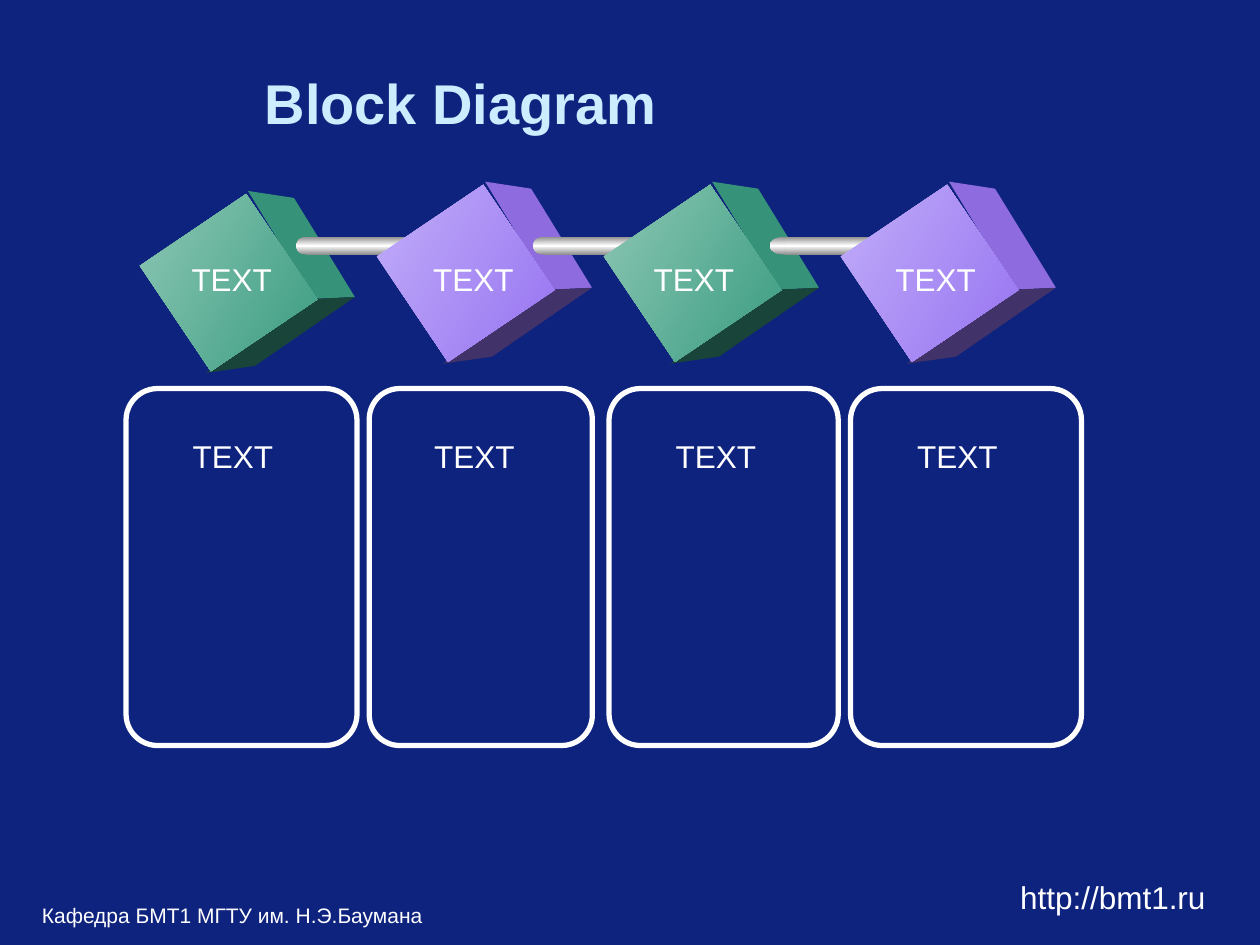
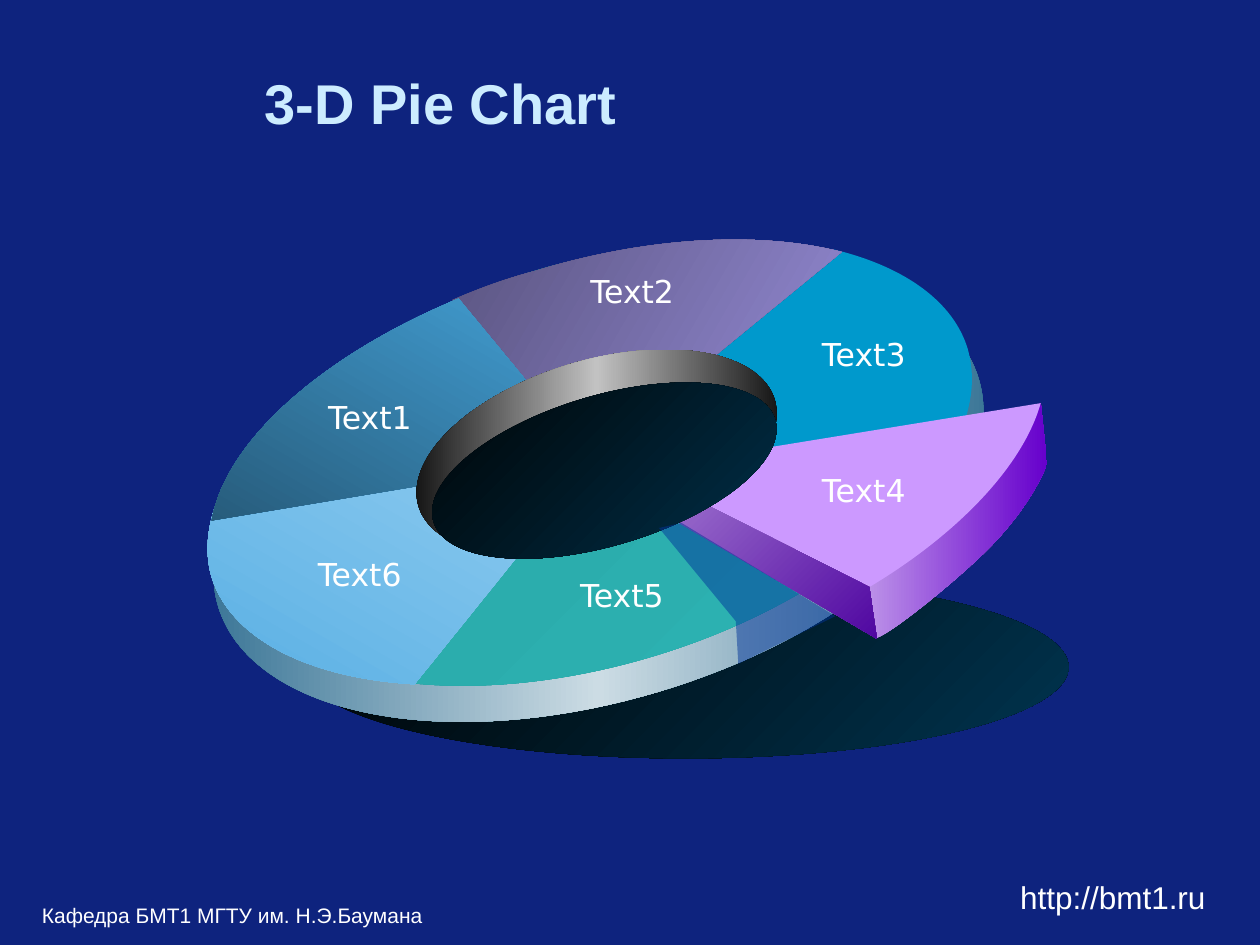
import pptx
import pptx.dml.color
import pptx.enum.shapes
import pptx.enum.text
import pptx.oxml
import pptx.oxml.ns
import pptx.util

Pt = pptx.util.Pt
RGBColor = pptx.dml.color.RGBColor
SHAPE = pptx.enum.shapes.MSO_SHAPE
ALIGN = pptx.enum.text.PP_ALIGN
qn = pptx.oxml.ns.qn
NAMESPACE = pptx.oxml.ns.nsdecls("a")

NAVY = RGBColor(0x0E, 0x23, 0x7E)
NAVY_DARK = RGBColor(0x0A, 0x19, 0x5A)
ICE = RGBColor(0xCC, 0xEC, 0xFF)
WHITE = RGBColor(0xFF, 0xFF, 0xFF)
BLACK = RGBColor(0x00, 0x00, 0x00)
SHADOW_BLUE = RGBColor(0x00, 0x34, 0x4F)
STEEL = RGBColor(0x90, 0x90, 0x90)
SILVER = RGBColor(0xC2, 0xC2, 0xC2)
RIM_BLUE = RGBColor(0x29, 0x69, 0x8D)
RIM_LIGHT = RGBColor(0xCC, 0xDC, 0xE4)
TEAL_DARK = RGBColor(0x28, 0xA0, 0xA0)
TEAL = RGBColor(0x2E, 0xB8, 0xB8)
CYAN = RGBColor(0x00, 0x99, 0xCC)
SKY_LIGHT = RGBColor(0x90, 0xCC, 0xF0)
SKY = RGBColor(0x5A, 0xB0, 0xE4)
PLUM = RGBColor(0x5A, 0x54, 0x80)
LAVENDER = RGBColor(0x96, 0x8C, 0xD8)
OCEAN = RGBColor(0x43, 0xA0, 0xD5)
OCEAN_DARK = RGBColor(0x27, 0x5C, 0x7C)
ORCHID = RGBColor(0xCC, 0x99, 0xFF)
ORCHID_WALL = RGBColor(0xBB, 0x90, 0xE8)
VIOLET = RGBColor(0x66, 0x00, 0xCC)
VIOLET_PALE = RGBColor(0xA8, 0x80, 0xD4)
VIOLET_DARK = RGBColor(0x50, 0x07, 0xA1)
GLASS_BLUE = RGBColor(0x00, 0x33, 0x99)

# Each cube has front light, front dark, right side and underside.
GREEN_CUBE = (RGBColor(0x8C, 0xC6, 0xB4), RGBColor(0x3B, 0x9D, 0x81),
              RGBColor(0x36, 0x92, 0x78), RGBColor(0x19, 0x44, 0x39))
PURPLE_CUBE = (RGBColor(0xC0, 0xAC, 0xF8), RGBColor(0x98, 0x74, 0xF2),
               RGBColor(0x8E, 0x6C, 0xE0), RGBColor(0x42, 0x32, 0x6A))


def paint(shape, colours, angle=0):
    """Fill a shape with one colour or an evenly spaced gradient, without line or shadow."""
    shape.shadow.inherit = False
    shape.line.fill.background()
    shape.fill.solid()
    shape.fill.fore_color.rgb = colours[0]
    if len(colours) > 1:
        stops = "".join(
            f'<a:gs pos="{100000 * index // (len(colours) - 1)}"><a:srgbClr val="{colour}"/></a:gs>'
            for index, colour in enumerate(colours))
        gradient = pptx.oxml.parse_xml(
            f'<a:gradFill {NAMESPACE} rotWithShape="0"><a:gsLst>{stops}</a:gsLst>'
            f'<a:lin ang="{angle * 60000}" scaled="0"/></a:gradFill>')
        solid = shape.fill._xPr.find(qn("a:solidFill"))
        solid.getparent().replace(solid, gradient)


def add_outline(page, points, colours, angle=0, curves=0):
    """Add a closed freeform; its first segments, as many as curves, are cubic."""
    corners = [(Pt(x), Pt(y)) for x, y in points]
    builder = page.shapes.build_freeform(*corners[0])
    builder.add_line_segments(corners[1:], close=True)
    shape = builder.convert_to_shape()
    segments = list(shape._element.iter(qn("a:lnTo")))
    for first in range(0, 3 * curves, 3):
        curve = pptx.oxml.parse_xml(f"<a:cubicBezTo {NAMESPACE}/>")
        segments[first].addprevious(curve)
        for segment in segments[first:first + 3]:
            curve.append(segment[0])
            segment.getparent().remove(segment)
    paint(shape, colours, angle)
    return shape


deck = pptx.Presentation()
deck.slide_width, deck.slide_height = Pt(720), Pt(540)
background = deck.slide_master.background.fill
background.solid()
background.fore_color.rgb = NAVY

pages = []
for heading in ("Block Diagram", "3-D Pie Chart"):
    page = deck.slides.add_slide(deck.slide_layouts[5])
    title = page.shapes.title
    title.left, title.top, title.width, title.height = Pt(144), Pt(36), Pt(545.76), Pt(44.64)
    title.text_frame.text = heading
    title.text_frame.vertical_anchor = pptx.enum.text.MSO_ANCHOR.MIDDLE
    para = title.text_frame.paragraphs[0]
    para.alignment = ALIGN.LEFT
    font = para.runs[0].font
    font.name, font.size, font.bold = "Arial", Pt(32), True
    font.color.rgb = ICE
    pages.append(page)
block_page, pie_page = pages

# Block diagram: cards
for left, width in ((486, 132), (348, 131), (211, 127.5), (72, 132)):
    card = block_page.shapes.add_shape(SHAPE.ROUNDED_RECTANGLE, Pt(left), Pt(222), Pt(width), Pt(204))
    card.adjustments[0] = 0.137
    card.shadow.inherit = False
    card.fill.background()
    card.line.color.rgb = WHITE
    card.line.width = Pt(3)

# Block diagram: each cube covers the end of the rod that comes from the previous one
CUBE_RIGHT = ((58.3, 0), (84.6, 4), (119.4, 60.6), (96, 61.7))
CUBE_UNDER = ((96, 61.7), (119.4, 60.6), (62.3, 100), (34.3, 104))
cubes = ((83.4, 109.1, GREEN_CUBE, (169.2, 12.2, 61.2)),
         (218.9, 103.8, PURPLE_CUBE, (304.6, 12.2, 61.2)),
         (348.6, 103.8, GREEN_CUBE, (439.9, 16.6, 79.9)),
         (484, 103.8, PURPLE_CUBE, None))
for left, top, (light, dark, side, under), rod in cubes:
    for face, colour in ((CUBE_RIGHT, side), (CUBE_UNDER, under)):
        add_outline(block_page, [(left + x, top + y) for x, y in face], [colour])
    front = block_page.shapes.add_shape(SHAPE.RECTANGLE, Pt(left + 10.8), Pt(top + 15.7), Pt(72.7), Pt(73.4))
    front.rotation = 56
    paint(front, [light, dark], 30)
    if rod:
        rod_left, cap_width, length = rod
        bar_left = rod_left + cap_width / 2
        bar_end = bar_left + length
        metal, socket = [STEEL, WHITE, STEEL], [NAVY_DARK, NAVY, NAVY_DARK]
        for kind, x, y, width, height, colours in (
                (SHAPE.OVAL, rod_left, 135.4, cap_width, 10.1, metal),
                (SHAPE.RECTANGLE, bar_left, 135.4, length, 10.1, metal),
                (SHAPE.OVAL, bar_end - cap_width / 2, 136.1, cap_width * 0.88, 10.1, socket),
                (SHAPE.OVAL, bar_end, 139, cap_width / 4, 2.9, socket)):
            part = block_page.shapes.add_shape(kind, Pt(x), Pt(y), Pt(width), Pt(height))
            paint(part, colours, 90)

# Pie: shadow, outer wall and top of the ring
TILT = -16.6
for left, top, width, height, tilt, colours, angle in (
        (172.8, 329, 437.8, 104.4, 0, [BLACK, SHADOW_BLUE], 45),
        (115.2, 162.7, 453.6, 237.6, TILT, [RIM_BLUE, RIM_LIGHT, RIM_BLUE], 0),
        (120.2, 149.8, 437.8, 230.4, TILT, [TEAL_DARK, TEAL], 45)):
    disc = pie_page.shapes.add_shape(SHAPE.OVAL, Pt(left), Pt(top), Pt(width), Pt(height))
    disc.rotation = tilt
    paint(disc, colours, angle)

# Pie: sectors on the top, a curved rim followed by the tip
sectors = (
    ([(476.6, 142.6), (517.7, 152.6), (545, 172.8), (553, 199.4),
      (557.3, 214.6), (555.8, 230.4), (548.6, 247.7), (337.7, 264.2)], [CYAN], 0),
    ([(122.4, 290.9), (118.1, 304.6), (117.4, 317.5), (121, 329.8),
      (131.8, 364.3), (175, 387.4), (236.9, 391), (338.4, 265)], [SKY_LIGHT, SKY], 120),
    ([(258.5, 171.4), (273.6, 164.9), (289.4, 159.1), (306, 154.8),
      (369.4, 135.4), (433.4, 131.8), (481, 144), (337.7, 261.4)], [PLUM, LAVENDER], 30),
    ([(262.1, 170.6), (184.3, 203), (128.9, 252), (121, 297.4), (337, 261.4)], [OCEAN, OCEAN_DARK], 120))
for points, colours, angle in sectors:
    add_outline(pie_page, points, colours, angle, curves=len(points) // 3 - (len(points) == 3))

hole_wall = pie_page.shapes.add_shape(SHAPE.OVAL, Pt(234.7), Pt(205.9), Pt(212.4), Pt(105.8))
hole_wall.rotation = TILT
paint(hole_wall, [BLACK, SILVER, BLACK])

# Pie: the slice pulled out, as outer wall, top and cut side
add_outline(pie_page, [(598.3, 265), (593.3, 278.6), (581, 297.4), (564.5, 313.9),
                       (547.9, 330.5), (511.2, 360.7), (501.1, 364.5),
                       (496.8, 334.8), (594.7, 230.2)], [ORCHID_WALL, VIOLET], curves=2)
add_outline(pie_page, [(594.7, 230.4), (584.6, 266.4), (547.2, 305.3), (496.8, 335.5),
                       (360, 268.6)], [ORCHID], curves=1)
add_outline(pie_page, [(496.8, 335.5), (501.1, 365), (370.8, 288.7), (362.9, 267.8)],
            [VIOLET_PALE, VIOLET_DARK], 45)

hole = pie_page.shapes.add_shape(SHAPE.OVAL, Pt(243.4), Pt(226.1), Pt(203.8), Pt(85.7))
hole.rotation = TILT
paint(hole, [BLACK, SHADOW_BLUE], 45)

gap_shade = add_outline(pie_page, [(376.6, 301.7), (420.5, 355), (421.9, 379.4),
                                   (477.4, 352.1), (389.5, 298.8)], [GLASS_BLUE])
shade_colour = gap_shade.fill._xPr.find(".//" + qn("a:srgbClr"))
shade_colour.append(pptx.oxml.parse_xml(f'<a:alpha {NAMESPACE} val="49000"/>'))

# Labels and footers: page, words, left, top, width, height, size, font, alignment
labels = [(block_page, "TEXT", left, 145, 60.5, 28.8, 18, "Arial", ALIGN.LEFT)
          for left in (102.4, 240.5, 366.5, 504.6)]
labels += [(block_page, "TEXT", 103 + 138 * column, 246.2, 60.5, 28.8, 18, "Arial", ALIGN.LEFT)
           for column in range(4)]
labels += [(pie_page, f"Text{number}", left, top, 65.5, 28.8, 18, "DejaVu Sans", ALIGN.CENTER)
           for number, (left, top) in enumerate(
               ((178.6, 223.9), (328.5, 151.9), (460.8, 187.9),
                (460.8, 265.7), (322.6, 325.4), (172.8, 313.9)), start=1)]
for page in pages:
    labels += [(page, "Кафедра БМТ1 МГТУ им. Н.Э.Баумана", 16.9, 512.3, 421.9, 27.7, 12, "Arial", ALIGN.LEFT),
               (page, "http://bmt1.ru", 468, 498.2, 228, 18, 18, "Arial", ALIGN.RIGHT)]

for page, words, left, top, width, height, size, face, alignment in labels:
    box = page.shapes.add_textbox(Pt(left), Pt(top), Pt(width), Pt(height))
    box.text_frame.word_wrap = width > 100
    box.text_frame.text = words
    para = box.text_frame.paragraphs[0]
    para.alignment = alignment
    font = para.runs[0].font
    font.name, font.size = face, Pt(size)
    font.color.rgb = WHITE

deck.save("out.pptx")
